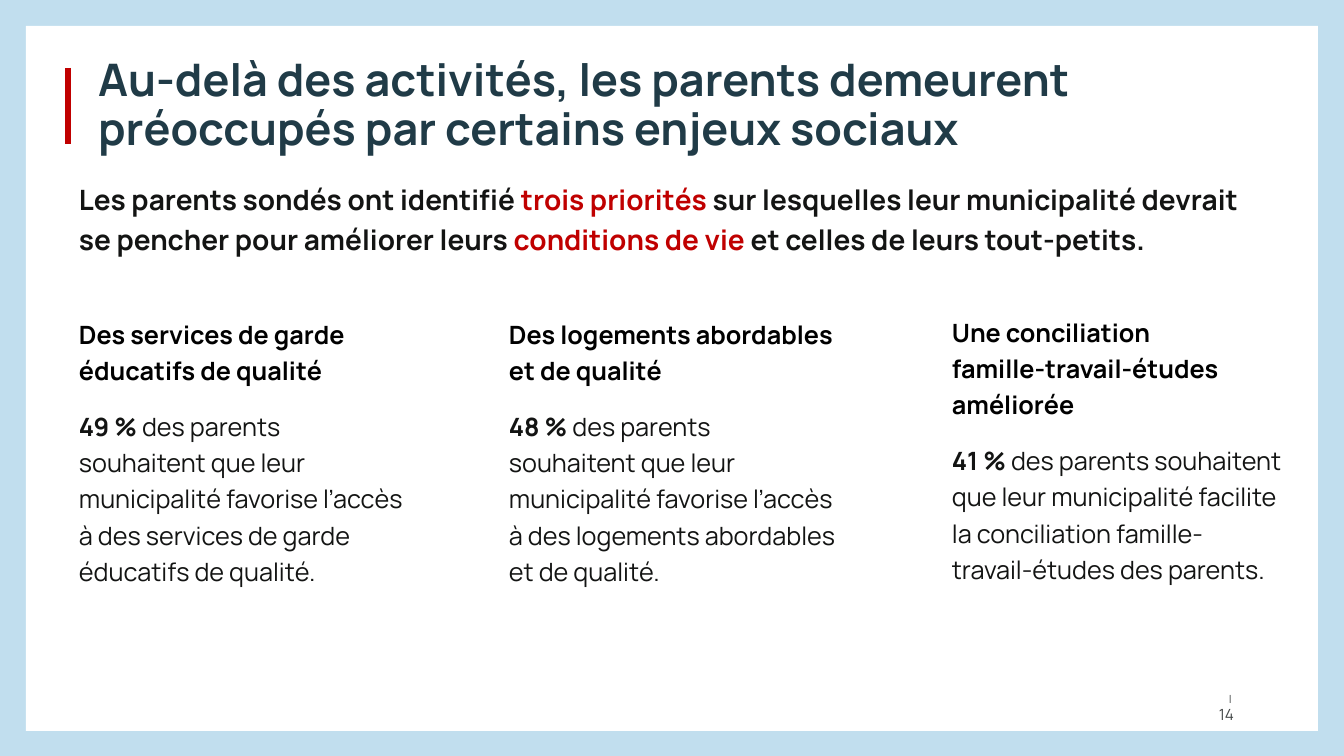
from dataclasses import dataclass

from lxml.etree import SubElement
from pptx import Presentation
from pptx.dml.color import RGBColor
from pptx.enum.shapes import MSO_CONNECTOR, MSO_SHAPE
from pptx.enum.text import MSO_ANCHOR, MSO_AUTO_SIZE, PP_ALIGN
from pptx.oxml.ns import qn
from pptx.util import Emu, Pt


@dataclass(frozen=True)
class Theme:
    font: str = "Manrope"
    border: str = "C1DEEE"
    panel: str = "FFFFFF"
    title: str = "203B47"
    heading: str = "000000"
    body: str = "131413"
    accent: str = "C00000"
    footer: str = "434747"
    title_size: int = 32
    lead_size: int = 20
    body_size: int = 18
    number_size: int = 11
    bar_size: int = 8
    accent_width: int = 4


@dataclass(frozen=True)
class Priority:
    left: int
    top: int
    width: int
    heading: list[str]
    share: str
    detail: list[str]


THEME = Theme()

PRIORITIES = [
    Priority(69, 308, 348, ["Des services de garde éducatifs de qualité"], "49 % ",
             ["des parents souhaitent que leur municipalité favorise "
              "l’accès à des services de garde éducatifs de qualité."]),
    Priority(499, 308, 350, ["Des logements abordables", "et de qualité"], "48 % ",
             ["des parents souhaitent que leur municipalité favorise "
              "l’accès à des logements abordables", "et de qualité."]),
    Priority(942, 306, 350, ["Une conciliation", "famille-travail-études améliorée"], "41 % ",
             ["des parents souhaitent que leur municipalité facilite "
              "la conciliation famille-travail-études des parents."]),
]

LEAD = [
    ("Les parents sondés ont identifié ", THEME.body),
    ("trois priorités ", THEME.accent),
    ("sur lesquelles leur municipalité devrait se pencher pour améliorer leurs ", THEME.body),
    ("conditions de vie ", THEME.accent),
    ("et celles de leurs tout-petits.", THEME.body),
]


def px(n: int) -> Emu:
    return Emu(round(n * 914400 / 100.8))


def add_text(p, text: str, *, size: int, color: str, bold: bool = False) -> None:
    r = p.add_run()
    r.text = text
    r.font.name = THEME.font
    r.font.size = Pt(size)
    r.font.bold = bold
    r.font.color.rgb = RGBColor.from_string(color)


def add_paragraph(tf, *, spacing: float = 1.2, before: int = 0, align=PP_ALIGN.LEFT):
    p = tf.paragraphs[0] if not tf.paragraphs[0].runs else tf.add_paragraph()
    p.line_spacing = spacing
    p.alignment = align
    if before:
        p.space_before = Pt(before)
    return p


def add_box(s, left: int, top: int, width: int, height: int):
    tf = s.shapes.add_textbox(px(left), px(top), px(width), px(height)).text_frame
    tf.word_wrap = True
    return tf


def add_panel(s) -> None:
    sp = s.shapes.add_shape(MSO_SHAPE.RECTANGLE, px(26), px(26), px(1292), px(705))
    sp.shadow.inherit = False
    sp.fill.solid()
    sp.fill.fore_color.rgb = RGBColor.from_string(THEME.panel)
    sp.line.fill.background()
    s.shapes.title._element.addprevious(sp._element)


def add_title(s, text: str) -> None:
    sp = s.shapes.title
    sp.left, sp.top, sp.width, sp.height = px(88), px(65), px(1162), px(95)
    tf = sp.text_frame
    tf.word_wrap = True
    tf.auto_size = MSO_AUTO_SIZE.NONE
    tf.vertical_anchor = MSO_ANCHOR.BOTTOM
    add_text(add_paragraph(tf, spacing=0.9), text,
             size=THEME.title_size, color=THEME.title, bold=True)


def add_accent(s) -> None:
    line = s.shapes.add_connector(MSO_CONNECTOR.STRAIGHT, px(68), px(68), px(68), px(144))
    line.line.color.rgb = RGBColor.from_string(THEME.accent)
    line.line.width = Pt(THEME.accent_width)
    SubElement(line._element.spPr, qn("a:effectLst"))


def add_lead(s) -> None:
    p = add_paragraph(add_box(s, 69, 171, 1210, 82))
    for text, color in LEAD:
        add_text(p, text, size=THEME.lead_size, color=color, bold=True)


def add_priority(s, item: Priority) -> None:
    tf = add_box(s, item.left, item.top, item.width, 343)
    for text in item.heading:
        add_text(add_paragraph(tf), text,
                 size=THEME.body_size, color=THEME.heading, bold=True)
    p = add_paragraph(tf, before=14)
    add_text(p, item.share, size=THEME.body_size, color=THEME.body, bold=True)
    first, *rest = item.detail
    add_text(p, first, size=THEME.body_size, color=THEME.body)
    for text in rest:
        add_text(add_paragraph(tf), text, size=THEME.body_size, color=THEME.body)


def add_page_number(s) -> None:
    tf = add_box(s, 1205, 687, 39, 29)
    for text, size in (("| ", THEME.bar_size), ("14", THEME.number_size)):
        add_text(add_paragraph(tf, spacing=1.0, align=PP_ALIGN.RIGHT), text,
                 size=size, color=THEME.footer)


def main() -> None:
    prs = Presentation()
    prs.slide_width, prs.slide_height = px(1344), px(756)
    s = prs.slides.add_slide(prs.slide_layouts[5])
    s.background.fill.solid()
    s.background.fill.fore_color.rgb = RGBColor.from_string(THEME.border)
    add_panel(s)
    add_title(s, "Au-delà des activités, les parents demeurent "
                 "préoccupés par certains enjeux sociaux")
    add_accent(s)
    add_lead(s)
    for item in PRIORITIES:
        add_priority(s, item)
    add_page_number(s)
    prs.save("out.pptx")


if __name__ == "__main__":
    main()
